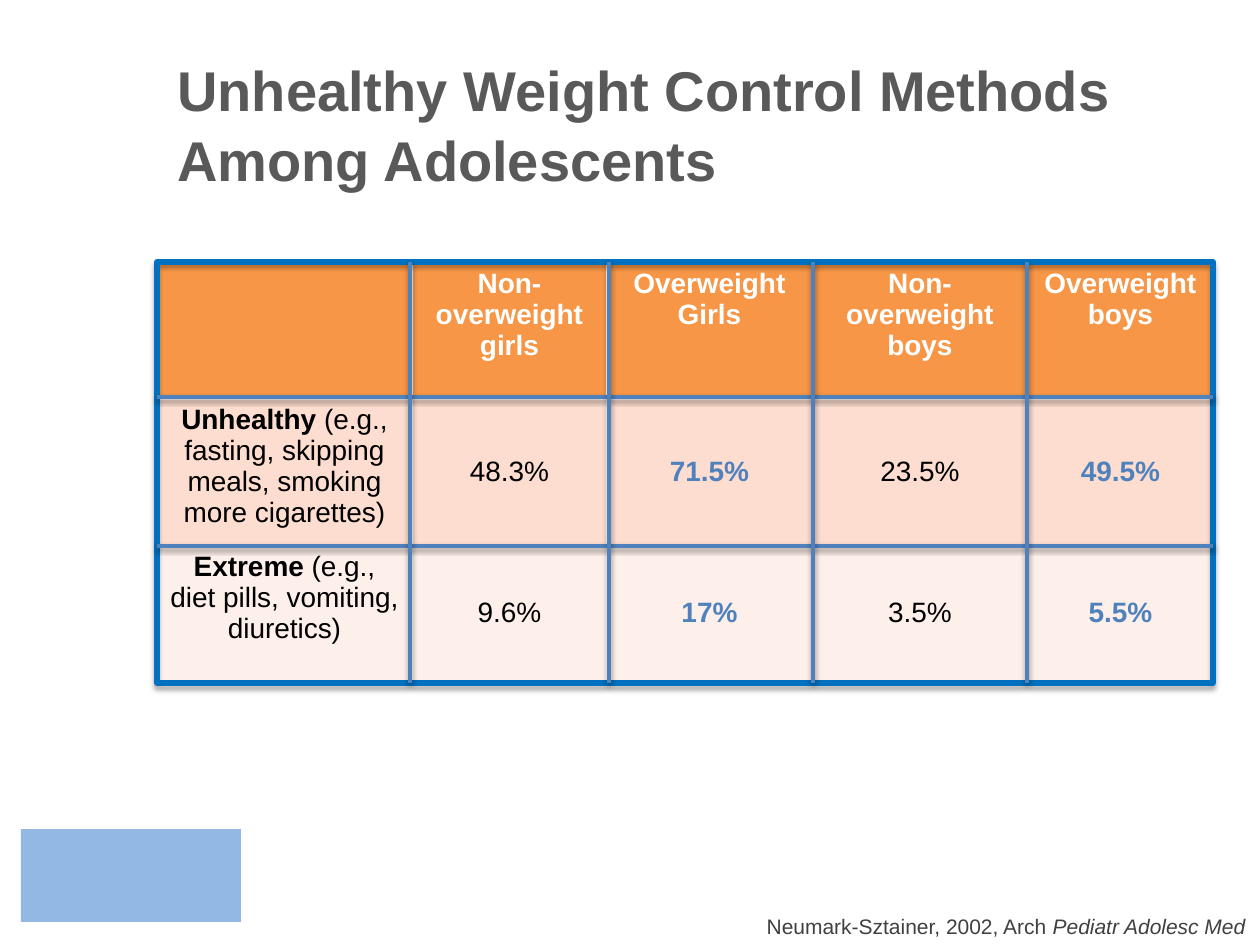
from lxml import etree
from pptx import Presentation
from pptx.dml.color import RGBColor
from pptx.enum.shapes import MSO_CONNECTOR, MSO_SHAPE
from pptx.enum.text import MSO_ANCHOR, PP_ALIGN
from pptx.oxml.ns import qn
from pptx.util import Emu, Pt

RECT = MSO_SHAPE.RECTANGLE
STRAIGHT = MSO_CONNECTOR.STRAIGHT
MIDDLE, TOP = MSO_ANCHOR.MIDDLE, MSO_ANCHOR.TOP
LEFT, CENTER, RIGHT = PP_ALIGN.LEFT, PP_ALIGN.CENTER, PP_ALIGN.RIGHT

WHITE = RGBColor(0xFF, 0xFF, 0xFF)
BLACK = RGBColor(0, 0, 0)
TITLE_GRAY = RGBColor(0x59, 0x59, 0x59)
SOURCE_GRAY = RGBColor(0x40, 0x40, 0x40)
ORANGE = RGBColor(0xF7, 0x96, 0x46)
PEACH = RGBColor(0xFC, 0xDD, 0xCF)
PALE_PEACH = RGBColor(0xFD, 0xEF, 0xE9)
FRAME_BLUE = RGBColor(0x00, 0x70, 0xC0)
GRID_BLUE = RGBColor(0x4F, 0x81, 0xBD)
LIGHT_BLUE = RGBColor(0x94, 0xB8, 0xE4)

FONT = "Arial"
TABLE_X, TABLE_Y, TABLE_W, TABLE_H = 157, 262, 1056, 421
COL_WIDTHS = [255, 195, 205, 216, 185]
ROW_HEIGHT = 136
GRID_ROWS = [397, 546]
GRID_COLS = [410, 609, 813, 1027]

HEADERS = ["", "Non-overweight girls", "Overweight Girls",
           "Non-overweight boys", "Overweight boys"]
METHODS = [
    ("Unhealthy", " (e.g., fasting, skipping meals, smoking more cigarettes)",
     ["48.3%", "71.5%", "23.5%", "49.5%"], PEACH),
    ("Extreme", " (e.g., diet pills, vomiting, diuretics)",
     ["9.6%", "17%", "3.5%", "5.5%"], PALE_PEACH),
]


def px(n):
    return Emu(round(n * 914400 / 126))


def box(*lengths):
    return [px(n) for n in lengths]


def write(p, runs, size, color, align, bold=None):
    p.alignment = align
    p.font.name = FONT
    p.font.size = Pt(size)
    p.font.color.rgb = color
    p.font.bold = bold
    for text, style in runs:
        r = p.add_run()
        r.text = text
        if style:
            setattr(r.font, style, True)


def add_text(slide, bounds, runs, size, color, align, bold=None):
    tf = slide.shapes.add_textbox(*box(*bounds)).text_frame
    tf.word_wrap = True
    p = tf.paragraphs[0]
    write(p, runs, size, color, align, bold)
    return p


def add_shadow(sp, alpha, distance):
    effects = etree.SubElement(sp._element.spPr, qn("a:effectLst"))
    shadow = etree.SubElement(effects, qn("a:outerShdw"), blurRad=str(Pt(3.1)),
                              dist=str(Pt(distance)), dir="5400000", rotWithShape="0")
    color = etree.SubElement(shadow, qn("a:srgbClr"), val=str(BLACK))
    etree.SubElement(color, qn("a:alpha"), val=str(alpha * 1000))


def add_frame(slide):
    sp = slide.shapes.add_shape(RECT, *box(TABLE_X, TABLE_Y, TABLE_W, TABLE_H))
    sp.fill.background()
    sp.line.color.rgb = FRAME_BLUE
    sp.line.width = Pt(3)
    add_shadow(sp, 35, 1.8)


def add_grid_line(slide, x1, y1, x2, y2):
    line = slide.shapes.add_connector(STRAIGHT, *box(x1, y1, x2, y2))
    line.line.color.rgb = GRID_BLUE
    line.line.width = Pt(2)
    add_shadow(line, 38, 1.6)


def add_block(slide, bounds, color):
    sp = slide.shapes.add_shape(RECT, *box(*bounds))
    sp.shadow.inherit = False
    sp.fill.solid()
    sp.fill.fore_color.rgb = color
    sp.line.fill.background()


def set_borders(cell, bottom):
    tc_pr = cell._tc.get_or_add_tcPr()
    for i, (side, width) in enumerate(zip(("lnL", "lnR", "lnT", "lnB"), (1, 1, 1, bottom))):
        ln = etree.Element(qn(f"a:{side}"), w=str(Pt(width)))
        fill = etree.SubElement(ln, qn("a:solidFill"))
        etree.SubElement(fill, qn("a:srgbClr"), val=str(WHITE))
        tc_pr.insert(i, ln)


def fill_cell(cell, runs, fill, color, anchor=TOP, bold=None, bottom=1):
    cell.fill.solid()
    cell.fill.fore_color.rgb = fill
    cell.vertical_anchor = anchor
    set_borders(cell, bottom)
    write(cell.text_frame.paragraphs[0], runs, 16, color, CENTER, bold)


def add_methods_table(slide):
    table = slide.shapes.add_table(
        len(METHODS) + 1, len(HEADERS), *box(TABLE_X, TABLE_Y, TABLE_W, TABLE_H)).table
    for column, width in zip(table.columns, COL_WIDTHS):
        column.width = px(width)
    for row in table.rows:
        row.height = px(ROW_HEIGHT)
    for col, header in enumerate(HEADERS):
        runs = [(header, None)] if header else []
        fill_cell(table.cell(0, col), runs, ORANGE, WHITE, bold=True, bottom=3)
    for row, (name, examples, values, fill) in enumerate(METHODS, 1):
        fill_cell(table.cell(row, 0), [(name, "bold"), (examples, None)], fill, BLACK)
        for col, value in enumerate(values, 1):
            overweight = col % 2 == 0
            fill_cell(table.cell(row, col), [(value, None)], fill,
                      GRID_BLUE if overweight else BLACK, MIDDLE, overweight)


def main():
    prs = Presentation()
    prs.slide_width, prs.slide_height = box(1260, 945)
    slide = prs.slides.add_slide(prs.slide_layouts[6])
    title = add_text(slide, (165, 47, 1095, 121),
                     [("Unhealthy Weight Control Methods Among Adolescents", None)],
                     32, TITLE_GRAY, LEFT, True)
    title.line_spacing = 1.04
    add_methods_table(slide)
    add_text(slide, (228, 907, 1030, 38),
             [("Neumark-Sztainer, 2002, Arch ", None), ("Pediatr Adolesc Med", "italic")],
             12, SOURCE_GRAY, RIGHT)
    add_frame(slide)
    for y in GRID_ROWS:
        add_grid_line(slide, TABLE_X, y, TABLE_X + TABLE_W, y)
    for x in GRID_COLS:
        add_grid_line(slide, x, TABLE_Y, x, TABLE_Y + TABLE_H)
    add_block(slide, (21, 829, 220, 93), LIGHT_BLUE)
    prs.save("out.pptx")


if __name__ == "__main__":
    main()
